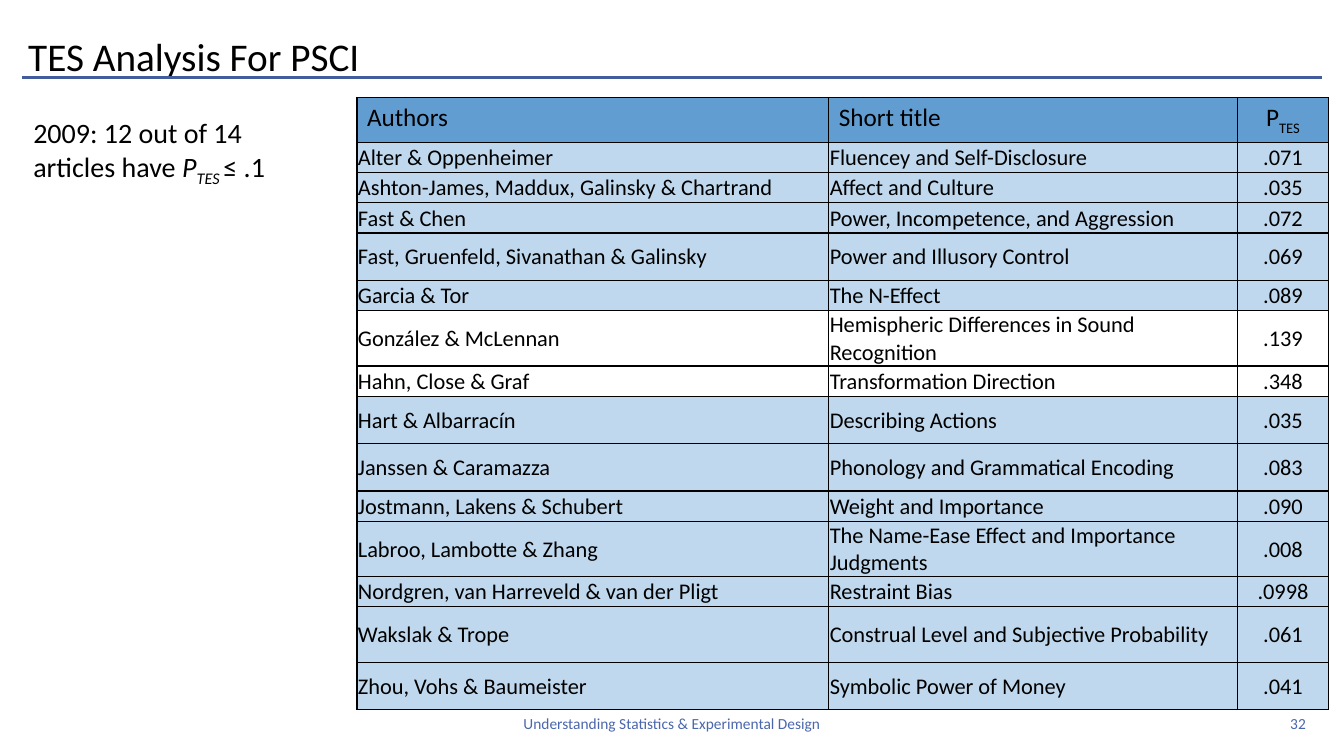
from lxml import etree
from pptx import Presentation
from pptx import util as u
from pptx.dml.color import RGBColor
from pptx.enum import shapes, text
from pptx.oxml.ns import qn

# Content
TITLE = "TES Analysis For PSCI"
SUMMARY = [("2009: 12 out of 14 articles have ", {}),
           ("P", {"italic": True}),
           ("TES ", {"italic": True, "sub": True}),
           ("≤ .1", {})]
FOOTER = "Understanding Statistics & Experimental Design"
PAGE_NUMBER = "32"
HEADER = [[("Authors", {})], [("Short title", {})],
          [("P", {}), ("TES", {"sub": True})]]
# Authors, short title, P of TES, row height
ARTICLES = [
    ("Alter & Oppenheimer", "Fluencey and Self-Disclosure", ".071", 0.3),
    ("Ashton-James, Maddux, Galinsky & Chartrand", "Affect and Culture", ".035", 0.3),
    ("Fast & Chen", "Power, Incompetence, and Aggression", ".072", 0.3),
    ("Fast, Gruenfeld, Sivanathan & Galinsky", "Power and Illusory Control", ".069", 0.47),
    ("Garcia & Tor", "The N-Effect", ".089", 0.3),
    ("González & McLennan", "Hemispheric Differences in Sound Recognition", ".139", 0.55),
    ("Hahn, Close & Graf", "Transformation Direction", ".348", 0.3),
    ("Hart & Albarracín", "Describing Actions", ".035", 0.47),
    ("Janssen & Caramazza", "Phonology and Grammatical Encoding", ".083", 0.47),
    ("Jostmann, Lakens & Schubert", "Weight and Importance", ".090", 0.3),
    ("Labroo, Lambotte & Zhang", "The Name-Ease Effect and Importance Judgments", ".008", 0.55),
    ("Nordgren, van Harreveld & van der Pligt", "Restraint Bias", ".0998", 0.3),
    ("Wakslak & Trope", "Construal Level and Subjective Probability", ".061", 0.55),
    ("Zhou, Vohs & Baumeister", "Symbolic Power of Money", ".041", 0.47),
]
CRITERION = 0.1
COLUMN_WIDTHS = (4.68, 4.05, 0.91)
HEADER_HEIGHT = 0.4

THEME = {
    "font": "Calibri", "ink": "000000", "footer": "4A66AC", "rule": "435C9B",
    "header_fill": "629DD1", "hit_fill": "C0D8ED",
    "title_size": 28, "body_size": 20, "header_size": 18, "cell_size": 16,
    "footer_size": 11,
}
LEFT, CENTER, RIGHT = text.PP_ALIGN.LEFT, text.PP_ALIGN.CENTER, text.PP_ALIGN.RIGHT
MIDDLE = text.MSO_ANCHOR.MIDDLE


def color(name):
    return RGBColor.from_string(THEME[name])


def apply(target, values):
    for name, value in values.items():
        setattr(target, name, value)


def place(shape, left, top, width, height):
    apply(shape, {"left": u.Inches(left), "top": u.Inches(top),
                  "width": u.Inches(width), "height": u.Inches(height)})


def write(para, parts, size, align=LEFT, ink="ink"):
    para.alignment = align
    for words, style in parts:
        span = para.add_run()
        span.text = words
        apply(span.font, {"name": THEME["font"], "size": u.Pt(THEME[size]),
                          "bold": False, "italic": style.get("italic", False)})
        span.font.color.rgb = color(ink)
        if style.get("sub"):
            span.font._element.set("baseline", "-25000")


def add_borders(cell):
    props = cell._tc.get_or_add_tcPr()
    for order, side in enumerate(("lnL", "lnR", "lnT", "lnB")):
        line = etree.Element(qn("a:" + side), w=str(u.Pt(1)))
        fill = etree.SubElement(line, qn("a:solidFill"))
        etree.SubElement(fill, qn("a:srgbClr"), val=THEME["ink"])
        props.insert(order, line)


def fill_cell(cell, parts, size, align, fill, layout):
    apply(cell, layout)
    write(cell.text_frame.paragraphs[0], parts, size, align)
    if fill:
        cell.fill.solid()
        cell.fill.fore_color.rgb = color(fill)
    else:
        cell.fill.background()
    add_borders(cell)


def add_article_table(page):
    heights = [HEADER_HEIGHT] + [article[-1] for article in ARTICLES]
    frame = page.shapes.add_table(
        len(heights), len(COLUMN_WIDTHS), u.Inches(3.54), u.Inches(0.97),
        u.Inches(sum(COLUMN_WIDTHS)), u.Inches(sum(heights)))
    table = frame.table
    apply(table, {"first_row": False, "horz_banding": False})
    for column, width in zip(table.columns, COLUMN_WIDTHS):
        column.width = u.Inches(width)
    for row, height in zip(table.rows, heights):
        row.height = u.Inches(height)

    aligns = (LEFT, LEFT, CENTER)
    tight = {"vertical_anchor": MIDDLE, "margin_left": u.Inches(0.01),
             "margin_right": u.Inches(0.01), "margin_top": u.Inches(0.01),
             "margin_bottom": 0}
    for col, parts in enumerate(HEADER):
        fill_cell(table.cell(0, col), parts, "header_size", aligns[col],
                  "header_fill", {})
    for row, article in enumerate(ARTICLES, start=1):
        fill = "hit_fill" if float(article[2]) <= CRITERION else None
        for col, align in enumerate(aligns):
            fill_cell(table.cell(row, col), [(article[col], {})], "cell_size",
                      align, fill, tight)


def add_footer_text(page, words, align, left, width):
    box = page.shapes.add_textbox(u.Inches(left), u.Inches(6.98),
                                  u.Inches(width), u.Inches(0.4))
    apply(box.text_frame, {"word_wrap": True, "vertical_anchor": MIDDLE})
    write(box.text_frame.paragraphs[0], [(words, {})], "footer_size", align, "footer")


def main():
    deck = Presentation()
    apply(deck, {"slide_width": u.Inches(13.33), "slide_height": u.Inches(7.5)})
    page = deck.slides.add_slide(deck.slide_layouts[1])

    # Title and summary
    title, body = page.placeholders
    place(title, 0.18, 0.19, 12.06, 0.65)
    place(body, 0.23, 1.1, 2.61, 1.44)
    for box, anchor in ((title, text.MSO_ANCHOR.BOTTOM), (body, text.MSO_ANCHOR.TOP)):
        apply(box.text_frame, {"word_wrap": True, "vertical_anchor": anchor,
                               "auto_size": text.MSO_AUTO_SIZE.NONE})
    write(title.text_frame.paragraphs[0], [(TITLE, {})], "title_size")
    para = body.text_frame.paragraphs[0]
    props = para._p.get_or_add_pPr()
    apply(para, {"space_before": u.Pt(0), "space_after": u.Pt(6)})
    props.set("marL", "0")
    props.set("indent", "0")
    etree.SubElement(props, qn("a:buNone"))
    write(para, SUMMARY, "body_size")

    # Rule under the title
    rule = page.shapes.add_connector(
        shapes.MSO_CONNECTOR.STRAIGHT, u.Inches(0.22), u.Inches(0.77),
        u.Inches(13.11), u.Inches(0.77))
    rule.line.color.rgb = color("rule")
    rule.line.width = u.Pt(2.25)
    etree.SubElement(rule._element.spPr, qn("a:effectLst"))

    # Footer, then the table in front of it
    add_footer_text(page, FOOTER, CENTER, 3.26, 6.81)
    add_footer_text(page, PAGE_NUMBER, RIGHT, 11.67, 1.38)
    add_article_table(page)

    deck.save("out.pptx")


if __name__ == "__main__":
    main()
